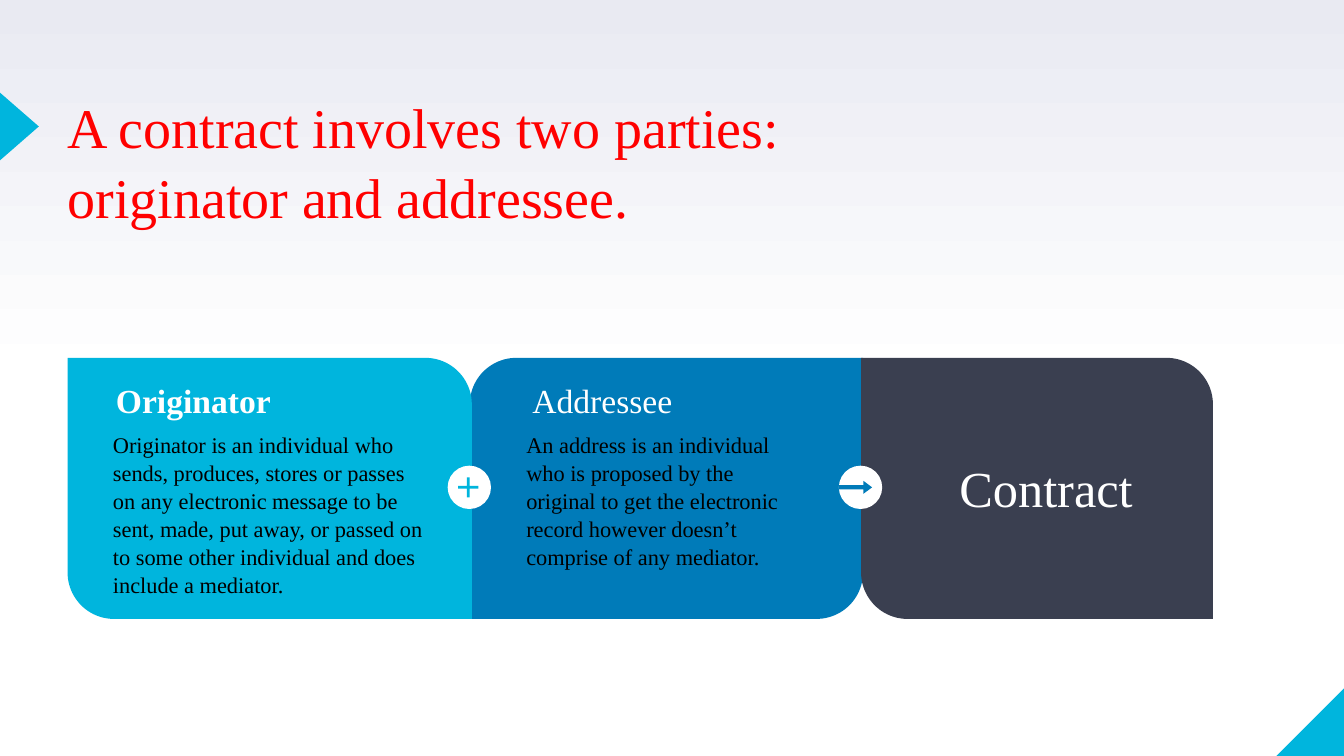
import pptx
import pptx.util
import pptx.dml.color
import pptx.enum.shapes
import pptx.enum.text

Inches = pptx.util.Inches
Shape = pptx.enum.shapes.MSO_SHAPE
Align = pptx.enum.text.PP_ALIGN

COLOURS = {
    "cyan": "00B5DD", "blue": "007BB9", "slate": "3A3F50", "white": "FFFFFF",
    "black": "000000", "red": "FF0000", "mist": "E9EAF2",
}
CARD_TOP, CARD_HEIGHT, CORNER = 3.55, 2.59, 0.178
BADGE_TOP, BADGE_SIZE = 4.62, 0.43


def colour(name):
    """Return the named colour as an RGB value."""
    return pptx.dml.color.RGBColor.from_string(COLOURS[name])


class ContractSlide:
    """Hold the text style and the page, and add each kind of element."""

    font_name = "Times New Roman"
    line_spacing = 1.05
    inset = 0.13

    def __init__(self, deck):
        """Add a title-only page to the deck."""
        self.page = deck.slides.add_slide(deck.slide_layouts[5])

    def background(self, low, high):
        """Fade the background from the middle up to the top edge."""
        fill = self.page.background.fill
        fill.gradient()
        fill.gradient_angle = 90
        for stop, position, name in zip(fill.gradient_stops, (0.5, 1), (low, high)):
            stop.position = position
            stop.color.rgb = colour(name)

    def fill_box(self, box, text, size, ink, inset, align=Align.LEFT, bold=False):
        """Set and format the single paragraph of a box."""
        frame = box.text_frame
        frame.text = text
        frame.word_wrap = True
        frame.auto_size = pptx.enum.text.MSO_AUTO_SIZE.NONE
        frame.vertical_anchor = pptx.enum.text.MSO_ANCHOR.TOP
        frame.margin_left = frame.margin_right = Inches(inset)
        frame.margin_top = frame.margin_bottom = Inches(inset)
        para = frame.paragraphs[0]
        para.alignment = align
        para.line_spacing = self.line_spacing
        para.font.name = self.font_name
        para.font.size = pptx.util.Pt(size)
        para.font.bold = bold
        para.font.color.rgb = colour(ink)

    def title(self, text, left, top, width, height):
        """Move, fill and format the title placeholder."""
        box = self.page.shapes.title
        box.left, box.top = Inches(left), Inches(top)
        box.width, box.height = Inches(width), Inches(height)
        self.fill_box(box, text, 40, "red", 0)

    def text(self, text, left, top, width, height, size, ink, **style):
        """Add a text box."""
        box = self.page.shapes.add_textbox(
            Inches(left), Inches(top), Inches(width), Inches(height))
        self.fill_box(box, text, size, ink, self.inset, **style)

    def shape(self, kind, left, top, width, height, fill, adjust=(), rotation=0):
        """Add a flat preset shape without outline."""
        shape = self.page.shapes.add_shape(
            kind, Inches(left), Inches(top), Inches(width), Inches(height))
        shape.shadow.inherit = False
        shape.fill.solid()
        shape.fill.fore_color.rgb = colour(fill)
        shape.line.fill.background()
        shape.rotation = rotation
        for index, value in enumerate(adjust):
            shape.adjustments[index] = value

    def card(self, left, width, fill, corners):
        """Add a panel with two opposite corners rounded."""
        self.shape(Shape.ROUND_2_DIAG_RECTANGLE, left, CARD_TOP, width,
                   CARD_HEIGHT, fill, corners)

    def badge(self, left):
        """Add a white disc on the seam of two cards."""
        self.shape(Shape.OVAL, left, BADGE_TOP, BADGE_SIZE, BADGE_SIZE, "white")


def main():
    """Build the contract slide and save it."""
    deck = pptx.Presentation()
    deck.slide_width, deck.slide_height = Inches(13.33), Inches(7.5)
    slide = ContractSlide(deck)
    slide.background("white", "mist")
    slide.shape(Shape.RIGHT_TRIANGLE, 12.66, 6.82, 0.68, 0.68, "cyan", rotation=270)
    slide.shape(Shape.ISOSCELES_TRIANGLE, -0.15, 1.06, 0.68, 0.39, "cyan", rotation=90)
    slide.title("A contract involves two parties: originator and addressee.",
                0.67, 0.88, 8.22, 1.58)

    slide.card(4.66, 3.9, "blue", (CORNER, 0))
    slide.text("Addressee", 5.15, 3.62, 2.91, 0.76, 24, "white")
    slide.text("An address is an individual who is proposed by the original to get "
               "the electronic record however doesn’t comprise of any mediator.",
               5.09, 4.13, 3.04, 1.01, 16, "black")

    slide.card(0.67, 4.01, "cyan", (0, CORNER))
    slide.text("Originator", 1.02, 3.62, 2.99, 0.76, 24, "white", bold=True)
    slide.text("Originator is an individual who sends, produces, stores or passes on "
               "any electronic message to be sent, made, put away, or passed on to "
               "some other individual and does include a mediator.",
               0.99, 4.13, 3.41, 0.89, 16, "black")

    slide.card(8.54, 3.49, "slate", (0, CORNER))
    slide.text("Contract", 8.97, 4.38, 2.81, 0.76, 36, "white", align=Align.CENTER)

    slide.badge(8.32)
    slide.shape(Shape.RIGHT_ARROW, 8.32, 4.77, 0.33, 0.13, "blue", (0.32, 0.67))
    slide.badge(4.44)
    slide.shape(Shape.MATH_PLUS, 4.51, 4.7, 0.27, 0.27, "cyan", (0.1,))
    deck.save("out.pptx")


if __name__ == "__main__":
    main()
